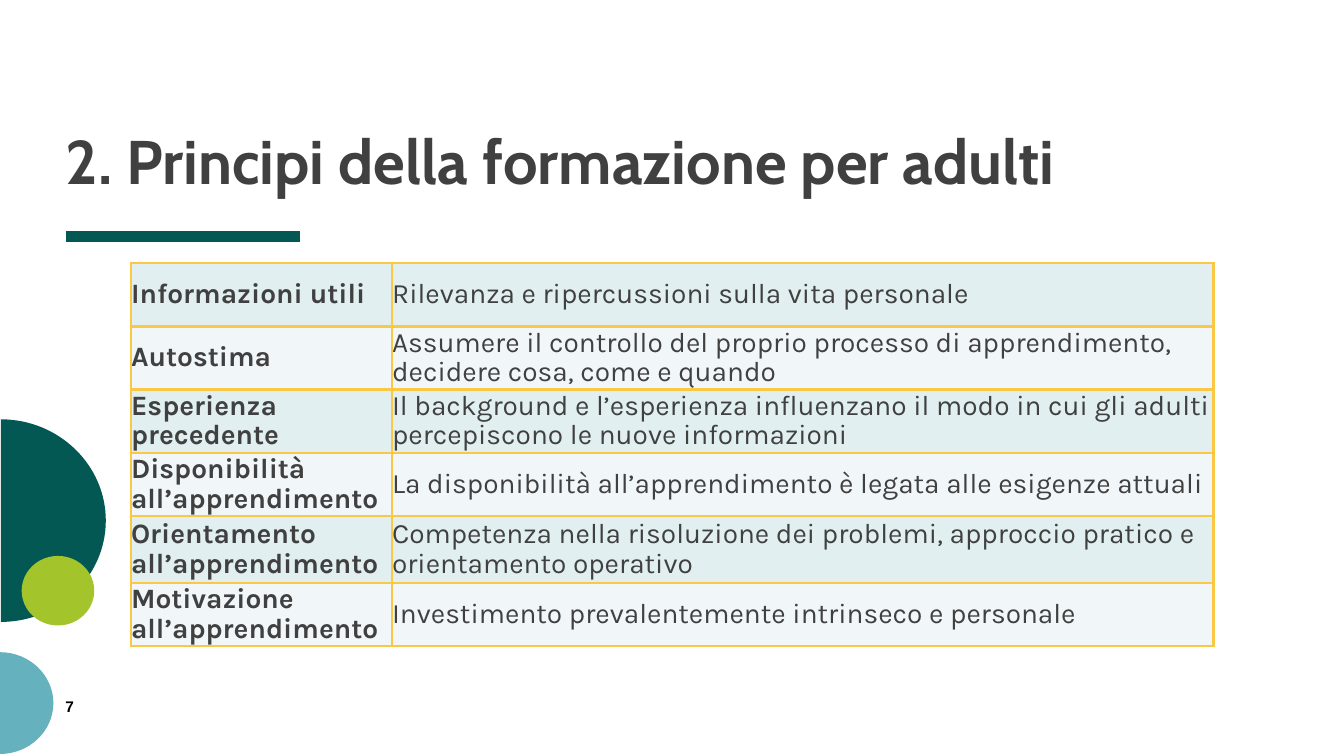
from dataclasses import dataclass

from lxml.etree import SubElement
from pptx import Presentation
from pptx.dml.color import RGBColor
from pptx.enum.shapes import MSO_CONNECTOR, MSO_SHAPE
from pptx.enum.text import MSO_ANCHOR, PP_ALIGN
from pptx.oxml.ns import qn
from pptx.util import Inches, Pt

TITLE = "2. Principi della formazione per adulti"
PAGE_NUMBER = "7"
PRINCIPLES = [
    ("Informazioni utili", "Rilevanza e ripercussioni sulla vita personale"),
    ("Autostima", "Assumere il controllo del proprio processo di apprendimento, decidere cosa, come e quando"),
    ("Esperienza precedente", "Il background e l’esperienza influenzano il modo in cui gli adulti percepiscono le nuove informazioni"),
    ("Disponibilità all’apprendimento", "La disponibilità all’apprendimento è legata alle esigenze attuali"),
    ("Orientamento all’apprendimento", "Competenza nella risoluzione dei problemi, approccio pratico e orientamento operativo"),
    ("Motivazione all’apprendimento", "Investimento prevalentemente intrinseco e personale"),
]


@dataclass(frozen=True)
class Theme:
    text: str = "404040"
    number: str = "000000"
    dark: str = "035854"
    blue: str = "65B2BE"
    green: str = "A3C42A"
    border: str = "FBC846"
    bands: tuple = ("E1EFF1", "F1F7F8")
    title_font: str = "Cabin"
    body_font: str = "Karla"
    number_font: str = "Arial"
    title_size: int = 44
    body_size: int = 20
    number_size: int = 11
    border_width: int = 2
    rule_width: int = 8


THEME = Theme()
WIDTH, HEIGHT = 40 / 3, 7.5
MARGIN = 0.65
RULE_TOP, RULE_RIGHT = 2.35, 2.98
TABLE_LEFT, TABLE_TOP, TABLE_HEIGHT = 1.3, 2.61, 3.8
COLUMNS = (2.59, 8.15)
TALL_ROW, TALL_ROW_HEIGHT = 4, 0.66
ROW_HEIGHT = (TABLE_HEIGHT - TALL_ROW_HEIGHT) / (len(PRINCIPLES) - 1)
HALF_DISCS = [
    (0.01, 4.16, 1.04, 2.01, THEME.dark),
    (0, 6.47, 0.53, 1.01, THEME.blue),
]
ARC_PULL = 0.55


def write(frame, text, *, font, size, color, bold=False, spacing=None, anchor=None):
    frame.word_wrap = True
    frame.margin_left = frame.margin_right = frame.margin_top = frame.margin_bottom = 0
    if anchor is not None:
        frame.vertical_anchor = anchor
    para = frame.paragraphs[0]
    para.alignment = PP_ALIGN.LEFT
    para.line_spacing = spacing
    span = para.add_run()
    span.text = text
    span.font.name = font
    span.font.size = Pt(size)
    span.font.bold = bold
    span.font.color.rgb = RGBColor.from_string(color)


def paint(shape, color):
    shape.shadow.inherit = False
    shape.fill.solid()
    shape.fill.fore_color.rgb = RGBColor.from_string(color)
    shape.line.fill.background()


def round_segment(segment, start, corner, end):
    curve = segment.makeelement(qn("a:cubicBezTo"))
    controls = [
        tuple(point[axis] + (corner[axis] - point[axis]) * ARC_PULL for axis in (0, 1))
        for point in (start, end)
    ]
    for x, y in (*controls, end):
        SubElement(curve, qn("a:pt"), x=str(int(x)), y=str(int(y)))
    segment.getparent().replace(segment, curve)


def add_half_disc(page, left, top, width, height, color):
    left, top, width, height = (Inches(length) for length in (left, top, width, height))
    builder = page.shapes.build_freeform(left, top)
    builder.add_line_segments(
        [(left + width, top + height // 2), (left, top + height), (left, top + height // 2)], close=True
    )
    disc = builder.convert_to_shape()
    upper, lower = list(disc._element.iter(qn("a:lnTo")))[:2]
    tip = (width, height // 2)
    round_segment(upper, (0, 0), (width, 0), tip)
    round_segment(lower, tip, (width, height), (0, height))
    paint(disc, color)


def add_decoration(page):
    rule = page.shapes.add_connector(
        MSO_CONNECTOR.STRAIGHT, Inches(MARGIN), Inches(RULE_TOP), Inches(RULE_RIGHT), Inches(RULE_TOP)
    )
    rule.line.color.rgb = RGBColor.from_string(THEME.dark)
    rule.line.width = Pt(THEME.rule_width)
    SubElement(rule._element.spPr, qn("a:effectLst"))
    for disc in HALF_DISCS:
        add_half_disc(page, *disc)
    dot = page.shapes.add_shape(
        MSO_SHAPE.OVAL, Inches(0.23), Inches(5.5), Inches(0.69), Inches(0.72)
    )
    dot.rotation = 270
    paint(dot, THEME.green)


def add_borders(cell):
    properties = cell._tc.get_or_add_tcPr()
    for position, side in enumerate(("lnL", "lnR", "lnT", "lnB")):
        line = properties.makeelement(qn(f"a:{side}"), {"w": str(Pt(THEME.border_width))})
        fill = SubElement(line, qn("a:solidFill"))
        SubElement(fill, qn("a:srgbClr"), val=THEME.border)
        properties.insert(position, line)


def add_principles(page):
    table = page.shapes.add_table(
        len(PRINCIPLES), len(COLUMNS), Inches(TABLE_LEFT), Inches(TABLE_TOP),
        Inches(sum(COLUMNS)), Inches(TABLE_HEIGHT),
    ).table
    table.first_row = False
    for column, width in zip(table.columns, COLUMNS):
        column.width = Inches(width)
    for row_index, (row, texts) in enumerate(zip(table.rows, PRINCIPLES)):
        row.height = Inches(TALL_ROW_HEIGHT if row_index == TALL_ROW else ROW_HEIGHT)
        for column_index, (cell, text) in enumerate(zip(row.cells, texts)):
            cell.fill.solid()
            cell.fill.fore_color.rgb = RGBColor.from_string(THEME.bands[row_index % 2])
            cell.margin_left = cell.margin_right = cell.margin_top = cell.margin_bottom = 0
            cell.vertical_anchor = MSO_ANCHOR.MIDDLE
            write(cell.text_frame, text, font=THEME.body_font, size=THEME.body_size,
                  color=THEME.text, bold=column_index == 0, spacing=0.9)
            add_borders(cell)


def main():
    deck = Presentation()
    deck.slide_width, deck.slide_height = Inches(WIDTH), Inches(HEIGHT)
    page = deck.slides.add_slide(deck.slide_layouts.get_by_name("Title Only"))
    add_decoration(page)
    title = page.shapes.title
    title.left, title.top = Inches(MARGIN), Inches(0.11)
    title.width, title.height = Inches(11.89), Inches(1.84)
    write(title.text_frame, TITLE, font=THEME.title_font, size=THEME.title_size,
          color=THEME.text, bold=True, spacing=0.8, anchor=MSO_ANCHOR.BOTTOM)
    add_principles(page)
    box = page.shapes.add_textbox(Inches(MARGIN), Inches(6.92), Inches(0.14), Inches(0.18))
    write(box.text_frame, PAGE_NUMBER, font=THEME.number_font, size=THEME.number_size,
          color=THEME.number, bold=True)
    deck.save("out.pptx")


if __name__ == "__main__":
    main()
